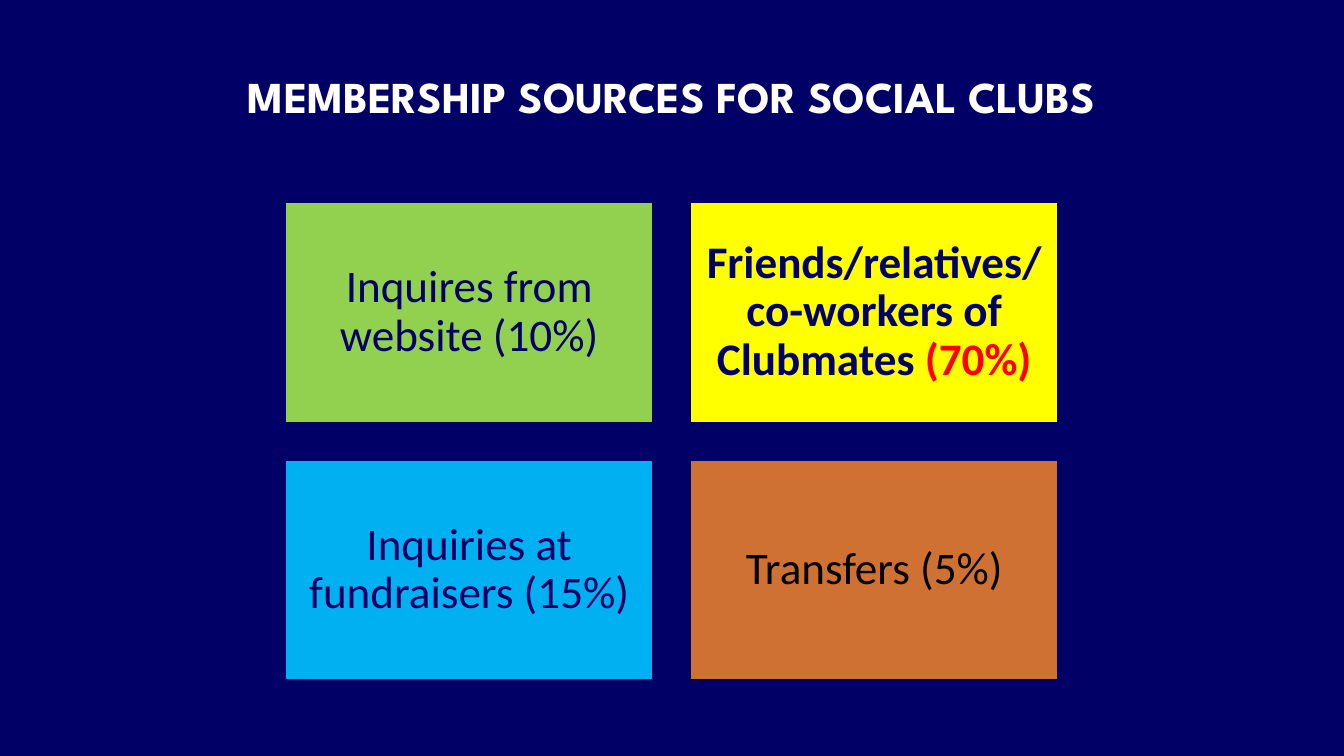
from dataclasses import dataclass

from pptx import Presentation
from pptx.dml.color import RGBColor
from pptx.enum.shapes import MSO_SHAPE
from pptx.enum.text import MSO_ANCHOR, PP_ALIGN
from pptx.util import Cm, Pt


@dataclass(frozen=True)
class Theme:
    """Colours, fonts and type sizes of the slide."""
    navy: str = "000066"
    white: str = "FFFFFF"
    black: str = "000000"
    red: str = "FF0000"
    green: str = "92D050"
    yellow: str = "FFFF00"
    blue: str = "00B0F0"
    orange: str = "CF7133"
    title_font: str = "League Spartan"
    body_font: str = "Calibri"
    title_size: int = 42
    body_size: int = 43


THEME = Theme()
TITLE = "MEMBERSHIP SOURCES FOR SOCIAL CLUBS"
SOURCES = [
    (THEME.green, False, [("Inquires from website (10%)", THEME.navy)]),
    (THEME.yellow, True, [("Friends/relatives/ co-workers of Clubmates ", THEME.navy),
                          ("(70%)", THEME.red)]),
    (THEME.blue, False, [("Inquiries at fundraisers (15%)", THEME.navy)]),
    (THEME.orange, False, [("Transfers (5%)", THEME.black)]),
]
COLUMNS = 2
GRID_LEFT, GRID_TOP = 9.58, 6.78
CARD_WIDTH, CARD_HEIGHT, GAP = 12.37, 7.42, 1.24


def apply_format(target, values):
    """Set each named attribute on the target."""
    for name, value in values.items():
        setattr(target, name, value)


def write_text(box, spans, inset, line_spacing, font_format):
    """Fill a box with one centred paragraph of coloured spans."""
    frame = box.text_frame
    margins = {f"margin_{side}": Cm(inset) for side in ("left", "right", "top", "bottom")}
    apply_format(frame, {"word_wrap": True, "vertical_anchor": MSO_ANCHOR.MIDDLE, **margins})
    para = frame.paragraphs[0]
    apply_format(para, {"alignment": PP_ALIGN.CENTER, "line_spacing": line_spacing})
    for text, colour in spans:
        span = para.add_run()
        span.text = text
        apply_format(span.font, font_format)
        span.font.color.rgb = RGBColor.from_string(colour)


def add_title(page):
    """Add the heading across the top of the page."""
    box = page.shapes.add_textbox(Cm(1.7), Cm(-0.3), Cm(41.73), Cm(7.06))
    write_text(box, [(TITLE, THEME.white)], 0.18, 1.0,
               {"name": THEME.title_font, "size": Pt(THEME.title_size), "bold": True})


def add_card(page, index, fill, bold, spans):
    """Add one membership source at its place in the grid."""
    row, column = divmod(index, COLUMNS)
    left = GRID_LEFT + column * (CARD_WIDTH + GAP)
    top = GRID_TOP + row * (CARD_HEIGHT + GAP)
    card = page.shapes.add_shape(MSO_SHAPE.RECTANGLE, Cm(left), Cm(top),
                                 Cm(CARD_WIDTH), Cm(CARD_HEIGHT))
    card.shadow.inherit = False
    card.fill.solid()
    card.fill.fore_color.rgb = RGBColor.from_string(fill)
    card.line.color.rgb = RGBColor.from_string(THEME.navy)
    card.line.width = Pt(2)
    write_text(card, spans, 0.46, 0.9,
               {"name": THEME.body_font, "size": Pt(THEME.body_size), "bold": bold})


def main():
    """Build the slide and save the deck."""
    deck = Presentation()
    apply_format(deck, {"slide_width": Cm(45.16), "slide_height": Cm(25.4)})
    page = deck.slides.add_slide(deck.slide_layouts[6])
    page.background.fill.solid()
    page.background.fill.fore_color.rgb = RGBColor.from_string(THEME.navy)
    add_title(page)
    for index, (fill, bold, spans) in enumerate(SOURCES):
        add_card(page, index, fill, bold, spans)
    deck.save("out.pptx")


if __name__ == "__main__":
    main()
